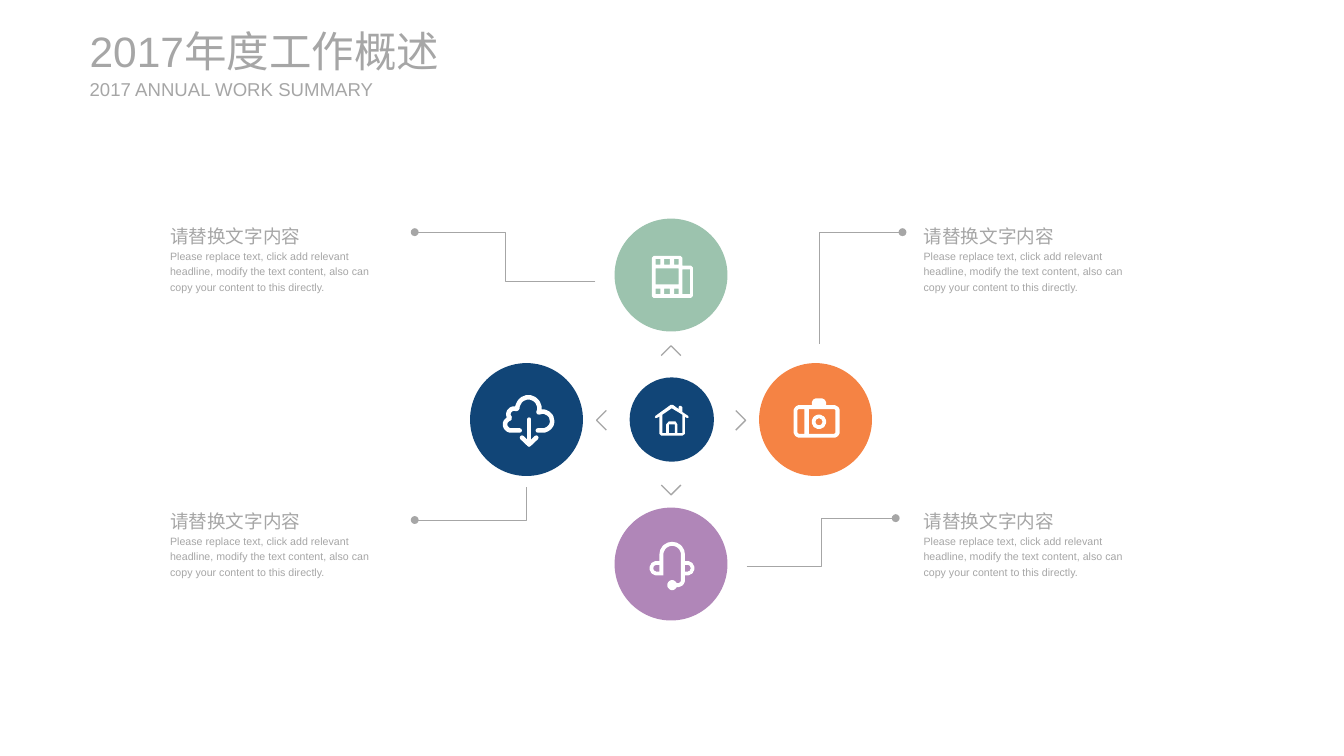
from dataclasses import dataclass
from math import cos, radians, sin

from lxml.etree import SubElement
from pptx import Presentation
from pptx.dml.color import RGBColor
from pptx.enum.shapes import MSO_SHAPE
from pptx.enum.text import MSO_ANCHOR, MSO_AUTO_SIZE, PP_ALIGN
from pptx.oxml.ns import qn
from pptx.shapes.autoshape import Shape
from pptx.slide import Slide
from pptx.text.text import TextFrame
from pptx.util import Cm, Pt

GREY = RGBColor(0xA6, 0xA6, 0xA6)
WHITE = RGBColor(0xFF, 0xFF, 0xFF)
NAVY = RGBColor(0x11, 0x45, 0x77)
GREEN = RGBColor(0x9C, 0xC3, 0xAE)
ORANGE = RGBColor(0xF5, 0x83, 0x44)
PURPLE = RGBColor(0xB0, 0x86, 0xB8)

FONT = "Arial"
HEADING = "请替换文字内容"
DETAIL = ("Please replace text, click add relevant headline, modify the text content, "
          "also can copy your content to this directly.")
CENTRE_X, CENTRE_Y = 17.83, 11.15
REACH = 3.84

Points = list[tuple[float, float]]


@dataclass
class Disc:
    x: float
    y: float
    diameter: float
    color: RGBColor
    icon: list[Points]
    stroke: float = 0


def arc(x: float, y: float, radius: float, start: int, end: int) -> Points:
    steps = max(2, abs(end - start) // 10)
    angles = [radians(start + (end - start) * i / steps) for i in range(steps + 1)]
    return [(x + radius * cos(a), y + radius * sin(a)) for a in angles]


def box(left: float, top: float, right: float, bottom: float) -> Points:
    return [(left, top), (right, top), (right, bottom), (left, bottom)]


FILM = [
    [(-46, -51), (25, -51), (30, -46), (30, -25), (53, -25), (58, -20),
     (58, 56), (53, 61), (-46, 61), (-51, 56), (-51, -46)],
    *[box(left, top, right, top + 15)
      for top in (-43, 36) for left, right in ((-41, -28), (-18, -3), (8, 20))],
    box(-41, -18, 20, 25),
    box(30, -15, 51, 51),
]
HEADSET = [
    [*arc(3, -25, 34, 0, -180), (-31, -8), *arc(-38, 11, 19, -90, -270), (-20, 30),
     *arc(3, -25, 23, 180, 360), *arc(18, 43, 8, 0, 90), *arc(3, 56, 13, -25, -335),
     *arc(18, 42, 19, 90, 0), (37, 30), *arc(43, 11, 19, 90, -90), (37, -8)],
    [(-31, 20), *arc(-38, 11, 9, 90, 270), (-31, 2)],
    [(37, 2), *arc(43, 11, 9, -90, 90), (37, 20)],
]
CAMERA = [
    [*arc(-43, -23, 15, 180, 270), (-10, -38), *arc(2, -44, 12, 180, 270),
     *arc(16, -44, 12, 270, 360), (28, -38), *arc(49, -23, 15, 270, 360),
     *arc(49, 33, 15, 0, 90), *arc(-43, 33, 15, 90, 180)],
    [*arc(-43, -23, 5, 180, 270), (-30, -28), (-30, 38), *arc(-43, 33, 5, 90, 180)],
    [(-18, -28), *arc(48, -23, 5, 270, 360), *arc(48, 33, 5, 0, 90), (-18, 38)],
    arc(9, 6, 19, 0, 360),
    arc(9, 6, 9, 0, 360),
]
HOUSE = [
    [(43, -10), (28, -20), (28, -33), (25, -36), (20, -36), (18, -33), (18, -28),
     (3, -39), (-3, -39), (-43, -10), (-45, -6), (-43, -4), (-38, -5), (-33, -8),
     (-33, 38), (-28, 43), (28, 43), (35, 38), (35, -8), (38, -5), (43, -4), (45, -6)],
    box(-8, 13, 8, 36),
    [(28, 36), (15, 36), (15, 13), (10, 5), (-8, 5), (-15, 13), (-15, 36),
     (-25, 36), (-25, -13), (0, -30), (28, -13)],
]
CLOUD = [
    [(-18, 29), *arc(-41, 13, 16, 90, 250), *arc(-33, -14, 15, 140, 290),
     *arc(5, -30, 29, 180, 380), *arc(43, 4, 25, -115, 90), (30, 29)],
    [(7, 0), (7, 66)],
    [(-12, 48), (7, 66), (26, 48)],
]

DISCS = [
    Disc(CENTRE_X, CENTRE_Y - REACH, 3, GREEN, FILM),
    Disc(CENTRE_X + 0.02, CENTRE_Y, 2.24, NAVY, HOUSE),
    Disc(CENTRE_X + REACH, CENTRE_Y, 3, ORANGE, CAMERA),
    Disc(CENTRE_X - REACH, CENTRE_Y, 3, NAVY, CLOUD, 3.4),
    Disc(CENTRE_X, CENTRE_Y + REACH, 3, PURPLE, HEADSET),
]
LEADERS: list[Points] = [
    [(1582, 747), (1344, 747), (1344, 617), (1102, 617)],
    [(2177, 914), (2177, 617), (2398, 617)],
    [(1984, 1506), (2182, 1506), (2182, 1377), (2380, 1377)],
    [(1400, 1295), (1400, 1382), (1102, 1382)],
]


def outline(slide: Slide, contours: list[Points], x: float = 0, y: float = 0,
            closed: bool = False) -> Shape:
    builder = None
    for contour in contours:
        start, *rest = [(round(px), round(py)) for px, py in contour]
        if builder is None:
            builder = slide.shapes.build_freeform(*start, scale=Cm(0.01))
        else:
            builder.move_to(*start)
        builder.add_line_segments(rest, close=closed)
    drawn = builder.convert_to_shape(Cm(x), Cm(y))
    drawn.shadow.inherit = False
    return drawn


def add_stroke(slide: Slide, contours: list[Points], color: RGBColor, width: float,
               x: float = 0, y: float = 0) -> Shape:
    stroke = outline(slide, contours, x, y)
    stroke.fill.background()
    stroke.line.color.rgb = color
    stroke.line.width = Pt(width)
    return stroke


def add_disc(slide: Slide, disc: Disc) -> None:
    radius = disc.diameter / 2
    circle = slide.shapes.add_shape(MSO_SHAPE.OVAL, Cm(disc.x - radius), Cm(disc.y - radius),
                                    Cm(disc.diameter), Cm(disc.diameter))
    circle.shadow.inherit = False
    circle.fill.solid()
    circle.fill.fore_color.rgb = disc.color
    circle.line.fill.background()
    if disc.stroke:
        icon = add_stroke(slide, disc.icon, WHITE, disc.stroke, disc.x, disc.y)
        icon.line._get_or_add_ln().set("cap", "rnd")
    else:
        icon = outline(slide, disc.icon, disc.x, disc.y, closed=True)
        icon.fill.solid()
        icon.fill.fore_color.rgb = WHITE
        icon.line.fill.background()


def add_leader(slide: Slide, route: Points) -> None:
    leader = add_stroke(slide, [route], GREY, 0.75)
    SubElement(leader.line._get_or_add_ln(), qn("a:tailEnd"), type="oval")


def add_chevron(slide: Slide, dx: int, dy: int) -> None:
    tip, base, half = 198, 172, 26
    wings = [(dx * base - dy * side, dy * base + dx * side) for side in (-half, half)]
    add_stroke(slide, [[wings[0], (dx * tip, dy * tip), wings[1]]], GREY, 1,
               CENTRE_X, CENTRE_Y + 0.02)


def write(frame: TextFrame, lines: list[tuple[str, int]], spacing: float,
          anchor: MSO_ANCHOR) -> None:
    frame.margin_left = frame.margin_right = frame.margin_top = frame.margin_bottom = 0
    frame.word_wrap = True
    frame.auto_size = MSO_AUTO_SIZE.NONE
    frame.vertical_anchor = anchor
    for index, (text, size) in enumerate(lines):
        paragraph = frame.add_paragraph() if index else frame.paragraphs[0]
        paragraph.alignment = PP_ALIGN.LEFT
        paragraph.line_spacing = spacing
        paragraph.space_before = Pt(0)
        run = paragraph.add_run()
        run.text = text
        run.font.name = FONT
        run.font.size = Pt(size)
        run.font.color.rgb = GREY


def place(holder: Shape, top: float, width: float, height: float, text: str, size: int) -> None:
    holder.left, holder.top = Cm(2.38), Cm(top)
    holder.width, holder.height = Cm(width), Cm(height)
    write(holder.text_frame, [(text, size)], 1.0, MSO_ANCHOR.MIDDLE)


def main() -> None:
    presentation = Presentation()
    presentation.slide_width, presentation.slide_height = Cm(35.71), Cm(20.09)
    slide = presentation.slides.add_slide(presentation.slide_layouts[0])
    place(slide.shapes.title, 0.66, 10.97, 1.37, "2017年度工作概述", 32)
    place(slide.placeholders[1], 2.06, 7.8, 0.61, "2017 ANNUAL WORK SUMMARY", 14)
    for disc in DISCS:
        add_disc(slide, disc)
    for route in LEADERS:
        add_leader(slide, route)
    for dx, dy in ((1, 0), (-1, 0), (0, 1), (0, -1)):
        add_chevron(slide, dx, dy)
    for left in (4.52, 24.54):
        for top in (5.87, 13.44):
            caption = slide.shapes.add_textbox(Cm(left), Cm(top), Cm(5.92), Cm(1.96))
            write(caption.text_frame, [(HEADING, 14), (DETAIL, 8)], 1.2, MSO_ANCHOR.TOP)
    presentation.save("out.pptx")


if __name__ == "__main__":
    main()
